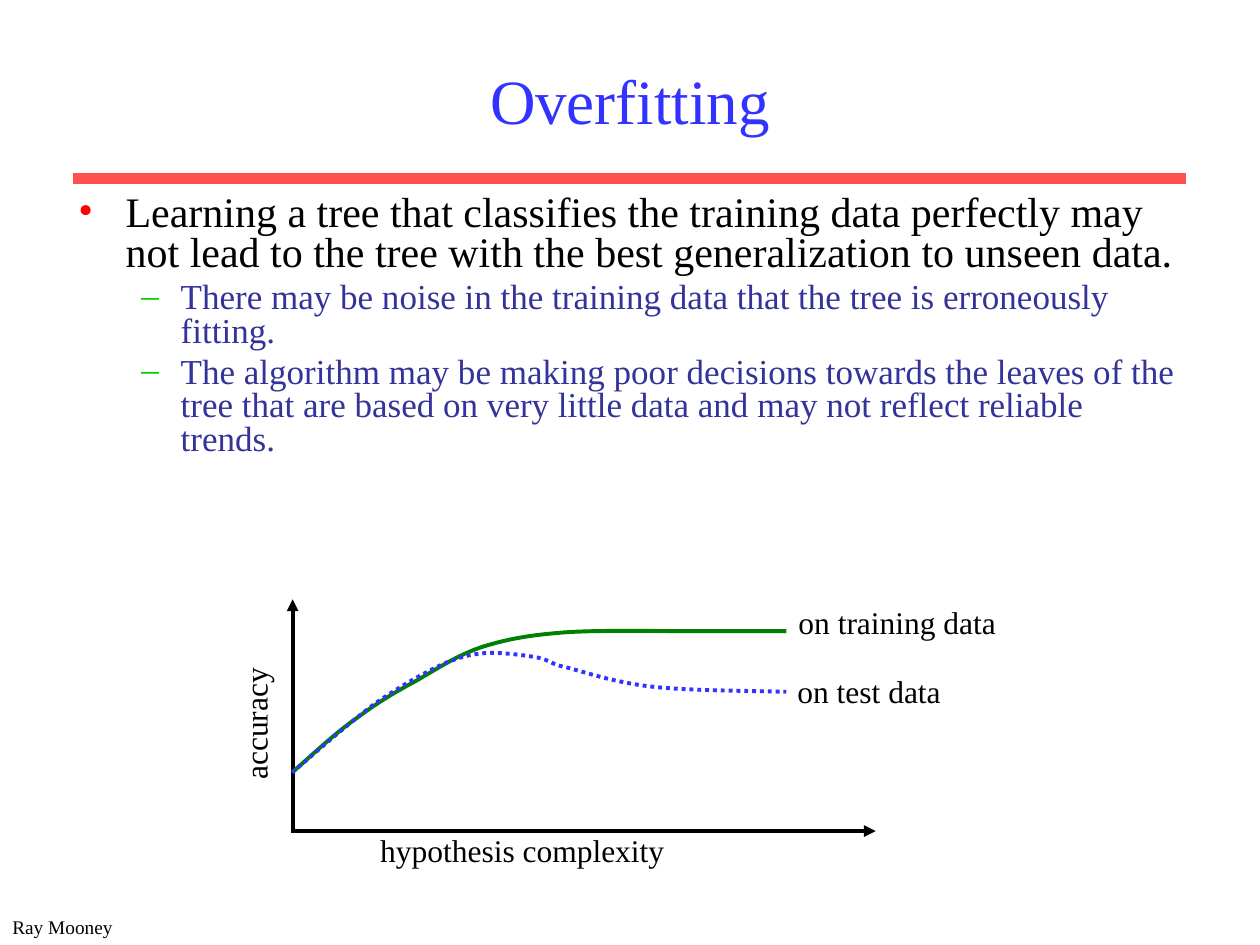
from lxml.etree import SubElement
from pptx import Presentation
from pptx.dml.color import RGBColor
from pptx.enum.dml import MSO_LINE
from pptx.enum.shapes import MSO_CONNECTOR
from pptx.enum.text import MSO_ANCHOR, MSO_AUTO_SIZE, PP_ALIGN
from pptx.oxml.ns import qn
from pptx.util import Pt

BLACK = RGBColor(0x00, 0x00, 0x00)
BLUE = RGBColor(0x33, 0x33, 0xFF)
NAVY = RGBColor(0x33, 0x33, 0x99)
GREEN = RGBColor(0x00, 0x80, 0x00)
CORAL = RGBColor(0xFF, 0x50, 0x50)
RED = RGBColor(0xFF, 0x00, 0x00)
LIME = RGBColor(0x00, 0xCC, 0x00)
FONT = "Times New Roman"

# level: (left margin, hanging indent, bullet, bullet colour, size, text colour)
BULLET_LEVELS = [
    (27, 27, "•", RED, 24, BLACK),
    (58.5, 22.5, "–", LIME, 20, NAVY),
]
BULLETS = [
    (0, "Learning a tree that classifies the training data perfectly may not "
        "lead to the tree with the best generalization to unseen data."),
    (1, "There may be noise in the training data that the tree is erroneously fitting."),
    (1, "The algorithm may be making poor decisions towards the leaves of the tree "
        "that are based on very little data and may not reflect reliable trends."),
]

# Bezier curves: a start point, then two control points and an end point per segment
TRAINING_CURVE = [
    (167, 441.4),
    (179.3, 430.6), (191.5, 419), (203.8, 410.4),
    (215.3, 401.8), (226.1, 395.3), (238.3, 388.8),
    (250.6, 381.6), (262.8, 373.7), (276.5, 369.4),
    (290.9, 365), (303.1, 362.9), (322.6, 361.4),
    (342, 360), (373.7, 360.7), (394.6, 360.7),
    (416.2, 360.7), (432.7, 360.7), (449.3, 360.7),
]
TEST_CURVE = [
    (167, 441.4),
    (183.6, 427), (200.2, 412.6), (214.6, 401.8),
    (229, 392), (243.4, 383.8), (254.9, 378.7),
    (265.7, 374.4), (270.7, 373.7), (279.4, 373),
    (288, 373), (300.2, 374.4), (307.4, 375.8),
    (314.6, 377.3), (313.9, 379.4), (324.7, 381.6),
    (335.5, 384.5), (352.1, 390.2), (373, 392.4),
    (393.1, 394.6), (421.2, 394.6), (449.3, 395.3),
]


def style_font(font, size, color):
    font.name = FONT
    font.size = Pt(size)
    font.color.rgb = color


def add_text(shapes, box, text, size, color=BLACK, wrap=False):
    shape = shapes.add_textbox(*map(Pt, box))
    frame = shape.text_frame
    frame.text = text
    frame.word_wrap = wrap
    frame.auto_size = MSO_AUTO_SIZE.NONE if wrap else MSO_AUTO_SIZE.SHAPE_TO_FIT_TEXT
    style_font(frame.paragraphs[0].runs[0].font, size, color)
    return shape


def add_title(shapes):
    frame = add_text(shapes, (54, 18, 612, 78), "Overfitting", 36, BLUE, wrap=True).text_frame
    frame.vertical_anchor = MSO_ANCHOR.MIDDLE
    frame.paragraphs[0].alignment = PP_ALIGN.CENTER


def set_bullet(paragraph, margin, hanging, character, color):
    properties = paragraph._p.get_or_add_pPr()
    properties.set("marL", str(Pt(margin)))
    properties.set("indent", str(-Pt(hanging)))
    bullet_color = SubElement(properties, qn("a:buClr"))
    SubElement(bullet_color, qn("a:srgbClr"), val=str(color))
    SubElement(properties, qn("a:buFont"), typeface=FONT)
    SubElement(properties, qn("a:buChar"), char=character)


def add_bullets(shapes):
    frame = shapes.add_textbox(Pt(37.7), Pt(108), Pt(643), Pt(255.6)).text_frame
    frame.word_wrap = True
    frame.text = "\n".join(text for _, text in BULLETS)
    for index, (paragraph, (level, _)) in enumerate(zip(frame.paragraphs, BULLETS)):
        margin, hanging, character, bullet_color, size, color = BULLET_LEVELS[level]
        paragraph.level = level
        set_bullet(paragraph, margin, hanging, character, bullet_color)
        paragraph.line_spacing = 0.8
        paragraph.space_before = Pt(0.2 * size if index else 0)
        style_font(paragraph.runs[0].font, size, color)


def add_line(shapes, start, end, color, width, arrow=False):
    line = shapes.add_connector(MSO_CONNECTOR.STRAIGHT, *map(Pt, start + end))
    line.line.color.rgb = color
    line.line.width = Pt(width)
    if arrow:
        SubElement(line.line._get_or_add_ln(), qn("a:tailEnd"), type="triangle")
    SubElement(line._element.spPr, qn("a:effectLst"))


def bend_segments(shape):
    """Turn each three straight segments into one cubic Bezier segment."""
    segments = list(shape._element.iter(qn("a:lnTo")))
    outline = segments[0].getparent()
    for first in range(0, len(segments), 3):
        bezier = SubElement(outline, qn("a:cubicBezTo"))
        for segment in segments[first:first + 3]:
            bezier.append(segment[0])
            outline.remove(segment)


def add_curve(shapes, curve, color, dash=None):
    start, *points = [tuple(map(Pt, point)) for point in curve]
    builder = shapes.build_freeform(*start)
    builder.add_line_segments(points, close=False)
    shape = builder.convert_to_shape()
    bend_segments(shape)
    shape.shadow.inherit = False
    shape.fill.background()
    shape.line.color.rgb = color
    shape.line.width = Pt(2.25)
    shape.line.dash_style = dash


def add_accuracy_plot(shapes):
    add_line(shapes, (167.2, 474.9), (167.2, 342.5), BLACK, 2.25, arrow=True)
    add_line(shapes, (166.3, 474.9), (500.4, 474.9), BLACK, 2.25, arrow=True)
    add_text(shapes, (210.2, 471.3, 194.4, 31), "hypothesis complexity", 18)
    add_text(shapes, (104.4, 394.6, 85, 31), "accuracy", 18).rotation = 270
    add_curve(shapes, TRAINING_CURVE, GREEN)
    add_text(shapes, (449.2, 341, 139.7, 31), "on training data", 18)
    add_curve(shapes, TEST_CURVE, BLUE, MSO_LINE.ROUND_DOT)
    add_text(shapes, (448.6, 380.5, 105.1, 31), "on test data", 18)


def main():
    presentation = Presentation()
    presentation.slide_width, presentation.slide_height = Pt(720), Pt(540)
    slide = presentation.slides.add_slide(presentation.slide_layouts[6])
    shapes = slide.shapes
    add_line(shapes, (42, 102), (678, 102), CORAL, 6)
    add_title(shapes)
    add_bullets(shapes)
    add_accuracy_plot(shapes.add_group_shape().shapes)
    add_text(shapes, (0, 519.5, 74.9, 20.9), "Ray Mooney", 11)
    presentation.save("out.pptx")


if __name__ == "__main__":
    main()
